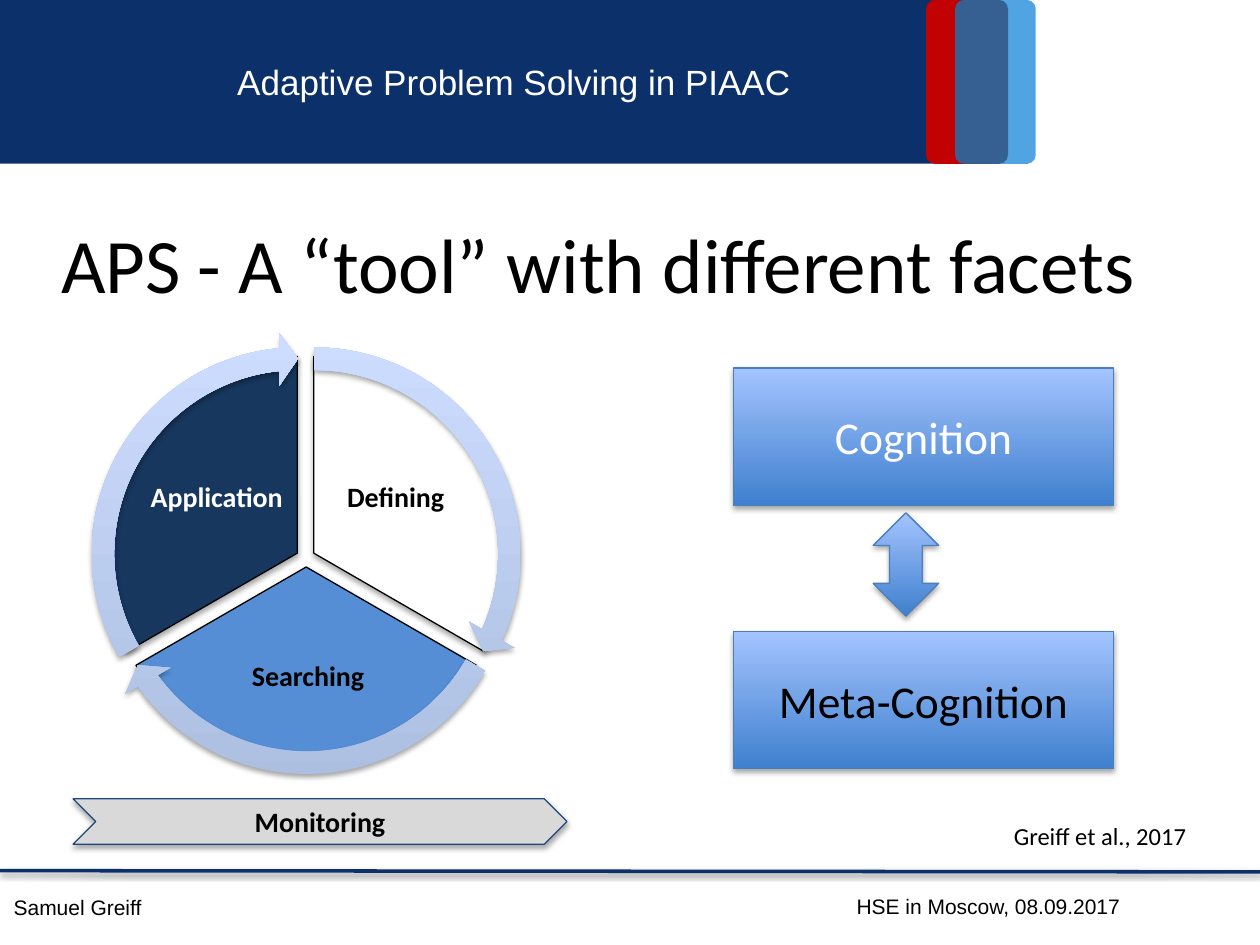
from pptx import Presentation
from pptx.dml.color import RGBColor
from pptx.enum import shapes, text
from pptx.oxml import parse_xml
from pptx.oxml.ns import nsdecls
from pptx.util import Inches, Pt

COLORS = {
    "navy": "0C316A", "sky": "50A4E2", "red": "C20202", "steel": "376092",
    "white": "FFFFFF", "black": "000000", "searching": "558ED5", "application": "17375E",
    "ring": ("ADBFE1", "CCDDFF"), "box": ("3F80CE", "A4C4FF"), "box edge": "4B7EBC",
    "grey": "D9D9D9", "chevron edge": "1F497D",
}
KIND = shapes.MSO_SHAPE
CENTER, RIGHT, LEFT = text.PP_ALIGN.CENTER, text.PP_ALIGN.RIGHT, text.PP_ALIGN.LEFT
TOP, MIDDLE = text.MSO_ANCHOR.TOP, text.MSO_ANCHOR.MIDDLE


def write(holder, words, size, color="black", font="Calibri", bold=False,
          align=CENTER, anchor=MIDDLE, wrap=True):
    frame = holder.text_frame
    frame.text = words
    for name, value in {"word_wrap": wrap, "vertical_anchor": anchor,
                        "auto_size": text.MSO_AUTO_SIZE.NONE}.items():
        setattr(frame, name, value)
    paragraph = frame.paragraphs[0]
    paragraph.alignment = align
    for name, value in {"name": font, "size": Pt(size), "bold": bold}.items():
        setattr(paragraph.runs[0].font, name, value)
    paragraph.runs[0].font.color.rgb = RGBColor.from_string(COLORS[color])
    return frame


def draw(kind, box, fill=None, edge=None, shadow=True, adjust=()):
    shape = slide.shapes.add_shape(kind, *map(Inches, box))
    for i, value in enumerate(adjust):
        shape.adjustments[i] = value
    if fill is None:
        shape.fill.background()
    elif isinstance(COLORS[fill], tuple):
        shape.fill.gradient()
        shape.fill.gradient_angle = 90
        for stop, shade in zip(shape.fill.gradient_stops, COLORS[fill]):
            stop.color.rgb = RGBColor.from_string(shade)
    else:
        shape.fill.solid()
        shape.fill.fore_color.rgb = RGBColor.from_string(COLORS[fill])
    if edge:
        shape.line.color.rgb = RGBColor.from_string(COLORS[edge])
        shape.line.width = Pt(0.75)
    else:
        shape.line.fill.background()
    shape.shadow.inherit = False
    if shadow:
        shape._element.spPr[-1].append(parse_xml(SHADOW.format(dist=23000, alpha=35000)))
    return shape


SHADOW = (f'<a:outerShdw {nsdecls("a")} blurRad="40000" dist="{{dist}}" dir="5400000" '
          'rotWithShape="0"><a:srgbClr val="000000"><a:alpha val="{alpha}"/></a:srgbClr>'
          '</a:outerShdw>')

deck = Presentation()
deck.slide_width, deck.slide_height = Inches(10), Inches(7.5)
slide = deck.slides.add_slide(deck.slide_layouts[5])

# Header band with coloured tabs
band = draw(KIND.RECTANGLE, (0, 0, 8.16, 1.3), "navy", shadow=False)
write(band, "Adaptive Problem Solving in PIAAC", 20, "white", "Arial")
for left, color in ((7.8, "sky"), (7.35, "red"), (7.58, "steel")):
    draw(KIND.ROUNDED_RECTANGLE, (left, 0, 0.42, 1.3), color, shadow=False)

# Footer rule and notes
rule = slide.shapes.add_connector(shapes.MSO_CONNECTOR.STRAIGHT, Inches(0), Inches(6.91),
                                  Inches(10), Inches(6.92))
rule.line.color.rgb = RGBColor.from_string(COLORS["navy"])
rule.line.width = Pt(2)
effects = parse_xml(f'<a:effectLst {nsdecls("a")}/>')
effects.append(parse_xml(SHADOW.format(dist=20000, alpha=38000)))
rule._element.spPr.append(effects)
for words, box, align in (("HSE in Moscow, 08.09.2017", (4.62, 7.04, 4.37, 0.3), RIGHT),
                          ("Samuel Greiff", (0.01, 7.05, 5.45, 0.3), LEFT)):
    note = slide.shapes.add_textbox(*map(Inches, box))
    write(note, words, 12, font="Arial", align=align, anchor=TOP)

# Title
title = slide.shapes.title
for side, value in {"left": 0.25, "top": 1.67, "width": 9, "height": 1.25}.items():
    setattr(title, side, Inches(value))
write(title, "APS - A “tool” with different facets", 44, anchor=TOP)

# Cycle: slices with labels, then the arrows around them
# (label, label box, text colour, slice colour, slice corner, slice angles, arrow angles);
# angles are in units of 100000/60000 degrees
phases = (
    ("Defining", (2.58, 3.49, 1.12, 0.93), "black", "white",
     (0.93, 2.83), (162, 18), (14.725, 161.994)),
    ("Searching", (1.61, 4.97, 1.67, 0.82), "black", "searching",
     (0.87, 2.94), (18, 90), (86.72, 18.005)),
    ("Application", (1.16, 3.49, 1.12, 0.93), "white", "application",
     (0.8, 2.83), (90, 162), (158.73, 90)),
)
for words, box, ink, fill, corner, angles, _ in phases:
    draw(KIND.PIE, (*corner, 3.12, 3.12), fill, "black", adjust=angles)
    label = slide.shapes.add_textbox(*map(Inches, box))
    frame = write(label, words, 16, ink, bold=True)
    for side in ("left", "top", "right", "bottom"):
        setattr(frame, f"margin_{side}", Inches(0.02))
    frame.paragraphs[0].line_spacing = 0.9
for *_, (left, top), _, sweep in phases:
    draw(KIND.CIRCULAR_ARROW, (left - 0.19, top - 0.19, 3.51, 3.51), "ring",
         adjust=(0.051, 3.275, *sweep, 0.059))

# Cognition and meta-cognition
for words, top, ink in (("Cognition", 2.92, "white"), ("Meta-Cognition", 5.01, "black")):
    write(draw(KIND.RECTANGLE, (5.82, top, 3.02, 1.09), "box", "box edge"), words, 26, ink)
draw(KIND.UP_DOWN_ARROW, (6.93, 4.07, 0.52, 0.82), "box", "box edge")

# Citation and monitoring bar
citation = draw(KIND.OVAL, (7.62, 6.34, 2.24, 0.58), shadow=False)
write(citation, "Greiff et al., 2017", 14, align=LEFT, wrap=False)
monitoring = draw(KIND.CHEVRON, (0.58, 6.34, 3.92, 0.36), "grey", "chevron edge")
write(monitoring, "Monitoring", 16, bold=True)

deck.save("out.pptx")
